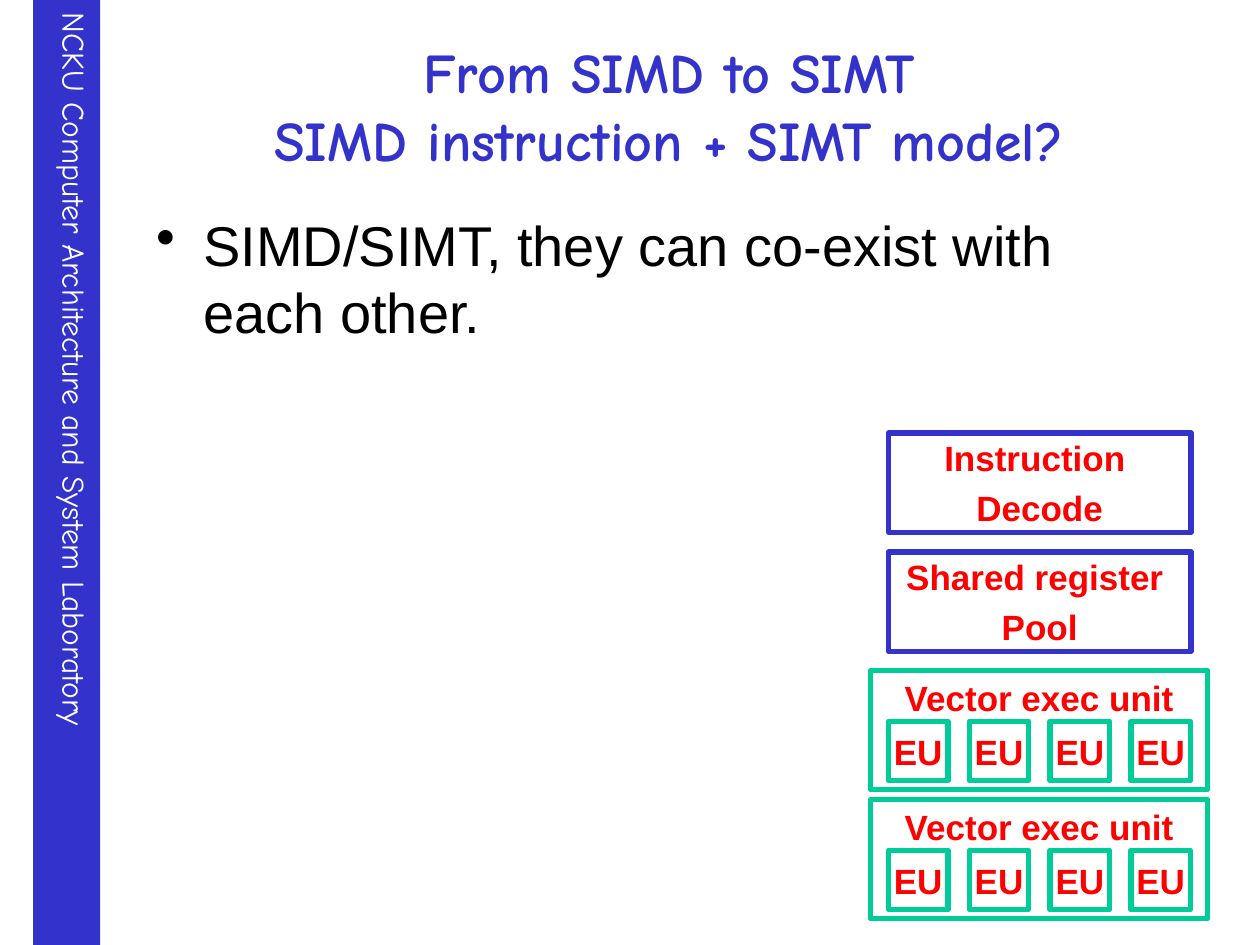
from dataclasses import dataclass

import pptx
import pptx.dml.color
import pptx.enum.shapes
import pptx.enum.text
import pptx.oxml
import pptx.oxml.ns
import pptx.util

Cm = pptx.util.Cm
Pt = pptx.util.Pt
Align = pptx.enum.text.PP_ALIGN
Anchor = pptx.enum.text.MSO_ANCHOR


@dataclass(frozen=True)
class Theme:
    blue: str = "3333CC"
    green: str = "00CC99"
    red: str = "FF0000"
    black: str = "000000"
    white: str = "FFFFFF"
    heading_font: str = "Comic Neue"
    body_font: str = "Arial"
    large: int = 32
    medium: int = 20
    small: int = 18
    outline: int = 3


THEME = Theme()
TITLE = {"name": THEME.heading_font, "size": Pt(THEME.large), "bold": True}
BODY = {"name": THEME.body_font, "size": Pt(THEME.large), "bold": False}
LABEL = {"name": THEME.body_font, "size": Pt(THEME.medium), "bold": True}
BANNER = {"name": THEME.heading_font, "size": Pt(THEME.small), "bold": False}


def set_attributes(target, values):
    for name, value in values.items():
        setattr(target, name, value)


def rgb(color):
    return pptx.dml.color.RGBColor.from_string(color)


def write_text(shape, lines, font, color, alignment, **frame_format):
    frame = shape.text_frame
    set_attributes(frame, {"auto_size": pptx.enum.text.MSO_AUTO_SIZE.NONE, **frame_format})
    frame.text = "\n".join(lines)
    for index, paragraph in enumerate(frame.paragraphs):
        paragraph.alignment = alignment
        paragraph.space_before = Pt(4.6 if index else 0)
        for run in paragraph.runs:
            set_attributes(run.font, font)
            run.font.color.rgb = rgb(color)


def add_title(slide, text):
    title = slide.shapes.title
    set_attributes(title, {"left": Cm(2.29), "top": Cm(0.53), "width": Cm(22.4), "height": Cm(3.18)})
    write_text(title, [text], TITLE, THEME.blue, Align.CENTER, vertical_anchor=Anchor.MIDDLE)


def add_bullet_text(slide, text):
    shape = slide.shapes.add_textbox(Cm(2.9), Cm(4.11), Cm(20.6), Cm(12.8))
    write_text(shape, [text], BODY, THEME.black, Align.LEFT, word_wrap=True)
    properties = shape.text_frame.paragraphs[0]._p.get_or_add_pPr()
    properties.set("marL", str(Cm(0.95)))
    properties.set("indent", str(-Cm(0.95)))
    bullet = pptx.oxml.parse_xml(f'<a:buChar {pptx.oxml.ns.nsdecls("a")} char="•"/>')
    properties.append(bullet)


def add_rectangle(slide, left, top, width, height, fill=None, line=None):
    shape = slide.shapes.add_shape(
        pptx.enum.shapes.MSO_SHAPE.RECTANGLE, Cm(left), Cm(top), Cm(width), Cm(height)
    )
    shape.shadow.inherit = False
    if fill:
        shape.fill.solid()
        shape.fill.fore_color.rgb = rgb(fill)
    else:
        shape.fill.background()
    if line:
        shape.line.color.rgb = rgb(line)
        shape.line.width = Pt(THEME.outline)
    else:
        shape.line.fill.background()
    return shape


def add_banner(slide, text):
    banner = add_rectangle(slide, 0.67, 0, 1.35, 19.05, fill=THEME.blue)
    write_text(banner, [text], BANNER, THEME.white, Align.LEFT, vertical_anchor=Anchor.TOP)
    banner.text_frame._txBody.bodyPr.set("vert", "eaVert")


def add_block(slide, lines, left, top, width, height, line, anchor=Anchor.MIDDLE):
    block = add_rectangle(slide, left, top, width, height, line=line)
    write_text(block, lines, LABEL, THEME.red, Align.CENTER, vertical_anchor=anchor, word_wrap=False)


def add_vector_unit(slide, top):
    for column in range(4):
        add_block(slide, ["EU"], 17.91 + 1.63 * column, top + 1.02, 1.2, 1.2, THEME.green)
    add_block(slide, ["Vector exec unit"], 17.55, top, 6.8, 2.4, THEME.green, Anchor.TOP)


def main():
    presentation = pptx.Presentation()
    set_attributes(presentation, {"slide_width": Cm(25.4), "slide_height": Cm(19.05)})
    slide = presentation.slides.add_slide(presentation.slide_layouts.get_by_name("Title Only"))

    add_banner(slide, "NCKU Computer Architecture and System Laboratory")
    add_title(slide, "From SIMD to SIMT\vSIMD instruction + SIMT model?")
    add_bullet_text(slide, "SIMD/SIMT, they can co-exist with each other.")
    stages = [["Instruction ", "Decode"], ["Shared register ", "Pool"]]
    for row, lines in enumerate(stages):
        add_block(slide, lines, 17.91, 8.73 + 2.4 * row, 6.1, 2, THEME.blue)
    for row in range(2):
        add_vector_unit(slide, 13.52 + 2.6 * row)

    presentation.save("out.pptx")


if __name__ == "__main__":
    main()
